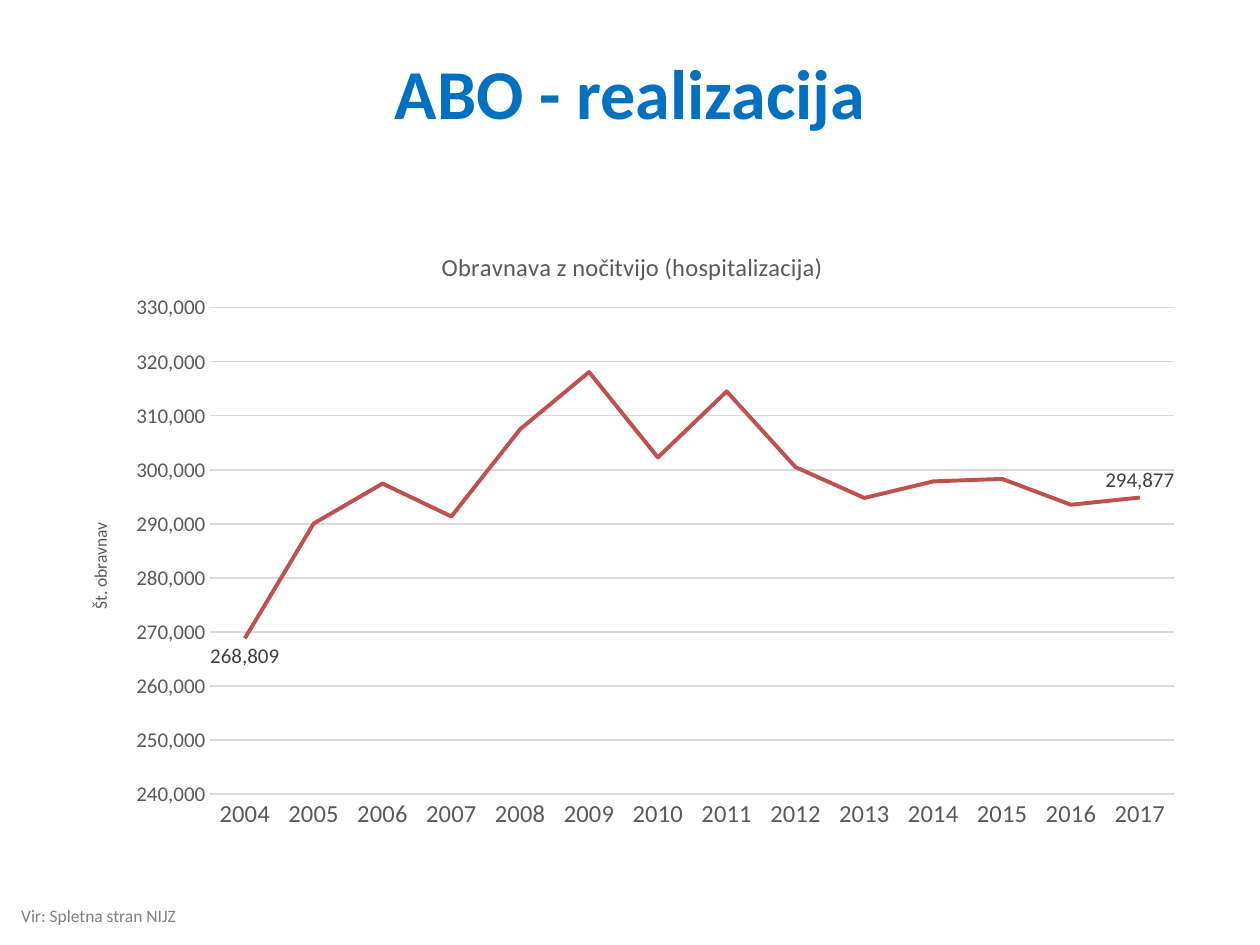
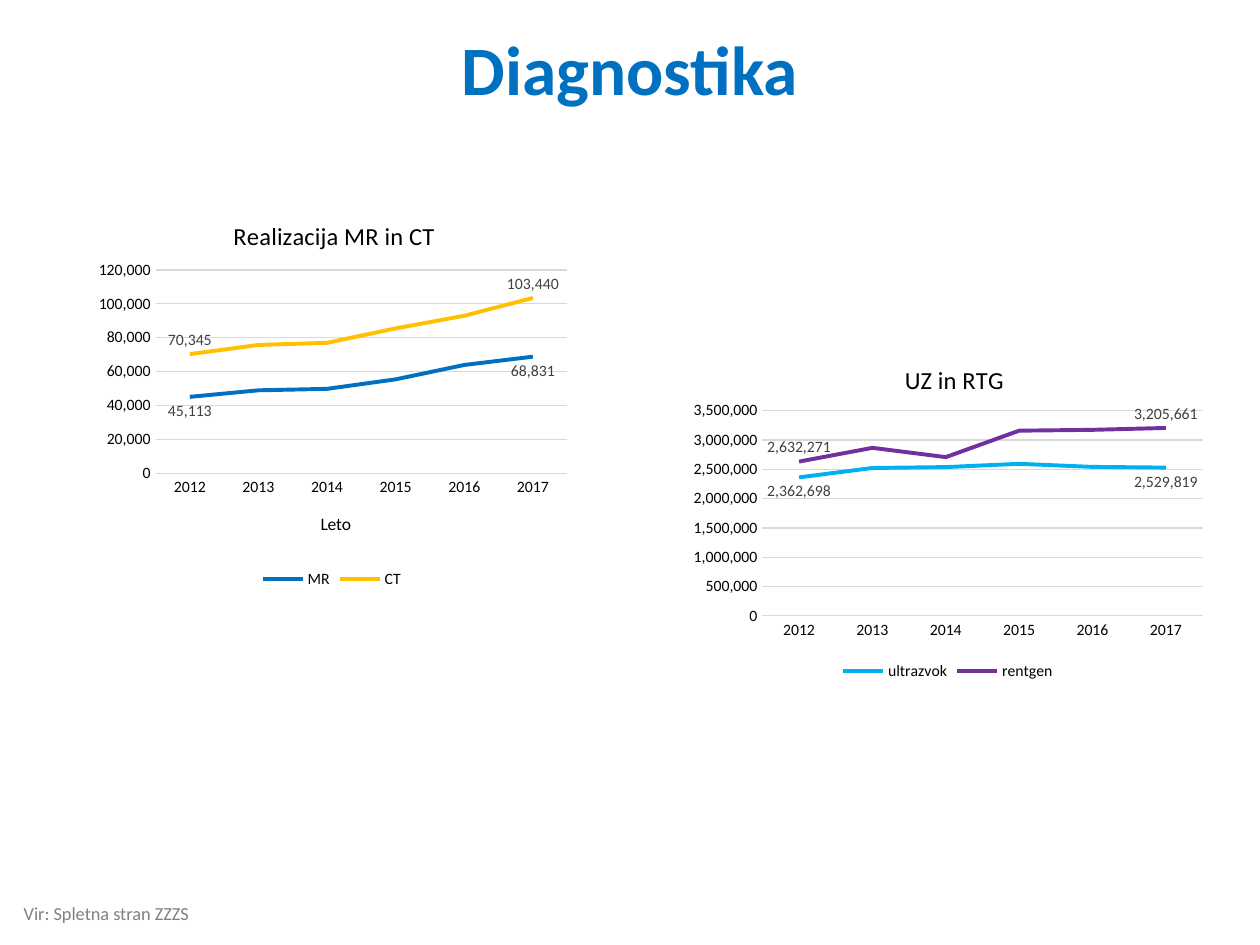
"""Build two slides of line charts on hospital care and diagnostics."""
from dataclasses import dataclass

from lxml import etree
from pptx import Presentation
from pptx.chart.data import CategoryChartData
from pptx.dml.color import RGBColor
from pptx.enum.chart import XL_CHART_TYPE, XL_LABEL_POSITION, XL_LEGEND_POSITION, XL_TICK_MARK
from pptx.enum.text import MSO_ANCHOR, MSO_AUTO_SIZE, PP_ALIGN
from pptx.oxml.ns import qn
from pptx.util import Pt

LINE_CHART = XL_CHART_TYPE.LINE
ABOVE, BELOW = XL_LABEL_POSITION.ABOVE, XL_LABEL_POSITION.BELOW
LEGEND_BOTTOM = XL_LEGEND_POSITION.BOTTOM
NO_TICK = XL_TICK_MARK.NONE
MIDDLE, CENTER, LEFT = MSO_ANCHOR.MIDDLE, PP_ALIGN.CENTER, PP_ALIGN.LEFT
NO_FIT = MSO_AUTO_SIZE.NONE
TITLE_ONLY = 5
THOUSANDS = "#,##0"


@dataclass(frozen=True)
class Theme:
    """Colours, font and type sizes."""
    font: str = "Calibri"
    heading: str = "0070C0"
    source: str = "808080"
    black: str = "000000"
    grey: str = "595959"
    label: str = "404040"
    grid: str = "D9D9D9"
    red: str = "C0504D"
    blue: str = "0070C0"
    yellow: str = "FFC000"
    cyan: str = "00B0F0"
    purple: str = "7030A0"
    chart_title_size: float = 14
    axis_title_size: float = 10
    grid_width: float = 0.75
    series_width: float = 2.25


THEME = Theme()


def set_all(target, **values):
    """Set each named attribute on the target."""
    for name, value in values.items():
        setattr(target, name, value)


def place(element, **fractions):
    """Give a chart part a manual layout in fractions of the chart."""
    layout = element.find(qn("c:layout"))
    if layout is not None:
        element.remove(layout)
    layout = etree.Element(qn("c:layout"))
    manual = etree.SubElement(layout, qn("c:manualLayout"))
    if "w" in fractions:
        etree.SubElement(manual, qn("c:layoutTarget"), val="inner")
    for axis in ("x", "y"):
        etree.SubElement(manual, qn(f"c:{axis}Mode"), val="edge")
    for name, value in fractions.items():
        etree.SubElement(manual, qn(f"c:{name}"), val=str(value))
    element.insert(0 if element.find(qn("c:tx")) is None else 1, layout)


class Deck:
    """Hold the theme and the current slide."""

    def __init__(self, theme):
        self.theme = theme
        self.deck = Presentation()
        set_all(self.deck, slide_width=Pt(720), slide_height=Pt(540))
        self.slide = None

    def style(self, font, size, color, bold=False):
        """Format a font in the theme typeface."""
        set_all(font, name=self.theme.font, size=Pt(size), bold=bold)
        font.color.rgb = RGBColor.from_string(color)

    def stroke(self, line, color, width):
        """Format a line."""
        line.color.rgb = RGBColor.from_string(color)
        line.width = Pt(width)

    def put_text(self, frame, text, size, color, align=LEFT, bold=False):
        """Fill a frame with one formatted paragraph."""
        frame.text = text
        paragraph = frame.paragraphs[0]
        paragraph.alignment = align
        self.style(paragraph.runs[0].font, size, color, bold)

    def title(self, text, box, size):
        """Start a slide with its title."""
        self.slide = self.deck.slides.add_slide(self.deck.slide_layouts[TITLE_ONLY])
        heading = self.slide.shapes.title
        set_all(heading, **dict(zip(("left", "top", "width", "height"), map(Pt, box))))
        set_all(heading.text_frame, auto_size=NO_FIT, vertical_anchor=MIDDLE)
        self.put_text(heading.text_frame, text, size, self.theme.heading, CENTER, True)

    def source(self, text, box, size):
        """Add the source note at the foot."""
        note = self.slide.shapes.add_textbox(*map(Pt, box))
        note.text_frame.word_wrap = True
        self.put_text(note.text_frame, text, size, self.theme.source)

    def axis(self, axis, size, color):
        """Format the parts that both axes share."""
        set_all(axis, major_tick_mark=NO_TICK, minor_tick_mark=NO_TICK)
        self.style(axis.tick_labels.font, size, color)

    def axis_title(self, axis, text, color, spot, rotation=0):
        """Fill and place an axis title."""
        title = axis.axis_title
        self.put_text(title.text_frame, text, self.theme.axis_title_size, color, CENTER)
        body = title.element.find(".//" + qn("a:bodyPr"))
        body.set("rot", str(rotation * 60000))
        body.set("vert", "horz")
        place(title.element, x=spot[0], y=spot[1])

    def line_chart(self, box, title, title_spot, plot_area, years, series,
                   scale, color, category_size, value_size, legend=False):
        """Add a line chart with labels on its end points."""
        theme = self.theme
        data = CategoryChartData(number_format=THOUSANDS)
        data.categories = [str(year) for year in years]
        for name, values, _, _ in series:
            data.add_series(name, values)
        chart = self.slide.shapes.add_chart(LINE_CHART, *map(Pt, box), data).chart
        self.style(chart.font, 10, theme.black)

        chart.has_title = True
        self.put_text(chart.chart_title.text_frame, title, theme.chart_title_size, color, CENTER)
        place(chart.chart_title.element, x=title_spot[0], y=title_spot[1])
        place(chart.element.find(".//" + qn("c:plotArea")), **dict(zip("xywh", plot_area)))

        categories, values = chart.category_axis, chart.value_axis
        self.axis(categories, category_size, color)
        self.axis(values, value_size, color)
        self.stroke(categories.format.line, theme.grid, theme.grid_width)
        self.stroke(values.major_gridlines.format.line, theme.grid, theme.grid_width)
        values.format.line.fill.background()
        set_all(values.tick_labels, number_format=THOUSANDS, number_format_is_linked=False)
        set_all(values, **dict(zip(("minimum_scale", "maximum_scale", "major_unit"), scale)))

        chart.has_legend = legend
        if legend:
            set_all(chart.legend, position=LEGEND_BOTTOM, include_in_layout=False)
            self.style(chart.legend.font, value_size, theme.black)

        chart.plots[0].vary_by_categories = False
        for curve, (_, _, curve_color, positions) in zip(chart.plots[0].series, series):
            curve.smooth = False
            self.stroke(curve.format.line, curve_color, theme.series_width)
            curve.data_labels.show_value = False
            for point, position in zip((0, len(years) - 1), positions):
                label = curve.points[point].data_label
                self.style(label.font, value_size, theme.label)
                label.position = position
        return chart


def hospital_slide(deck):
    """Show overnight hospital care by year."""
    deck.title("ABO - realizacija", (36, 7.2, 648, 90), 40)
    deck.source("Vir: Spletna stran NIJZ", (5, 513.4, 222.5, 19.4), 10)
    topic = "Obravnava z nočitvijo (hospitalizacija)"
    treatments = (268809, 290070, 297466, 291381, 307541, 318097, 302307,
                  314517, 300510, 294807, 297868, 298329, 293553, 294877)
    chart = deck.line_chart(
        (36, 126, 648, 356.4), topic, (0.33, 0.04), (0.13, 0.14, 0.85, 0.78),
        range(2004, 2018), [(topic, treatments, THEME.red, (BELOW, ABOVE))],
        (240000, 330000, 10000), THEME.grey, category_size=14, value_size=12)
    deck.axis_title(chart.value_axis, "Št. obravnav", THEME.grey, (0.02, 0.48), -90)


def diagnostics_slide(deck):
    """Show imaging volumes by year."""
    deck.title("Diagnostika", (49.7, 10.8, 620.6, 55.4), 39.6)
    deck.source("Vir: Spletna stran ZZZS", (6.5, 511.9, 130, 20.2), 10.5)
    shared = dict(years=range(2012, 2018), color=THEME.black,
                  category_size=9, value_size=9, legend=True)
    scans = [
        ("MR", (45113, 49019, 49863, 55464, 63945, 68831), THEME.blue, (BELOW, BELOW)),
        ("CT", (70345, 75741, 76998, 85496, 92946, 103440), THEME.yellow, (ABOVE, ABOVE)),
    ]
    chart = deck.line_chart(
        (49.7, 110.9, 280.1, 228.2), "Realizacija MR in CT", (0.29, 0.05),
        (0.14, 0.19, 0.84, 0.51), series=scans, scale=(0, 120000, 20000), **shared)
    deck.axis_title(chart.category_axis, "Leto", THEME.black, (0.47, 0.79))
    images = [
        ("ultrazvok", (2362698, 2522647, 2538111, 2594019, 2541105, 2529819),
         THEME.cyan, (BELOW, BELOW)),
        ("rentgen", (2632271, 2866571, 2708107, 3159634, 3173711, 3205661),
         THEME.purple, (ABOVE, ABOVE)),
    ]
    deck.line_chart(
        (390.2, 193, 303.1, 198.7), "UZ in RTG", (0.41, 0.06),
        (0.15, 0.21, 0.83, 0.59), series=images, scale=(0, 3500000, 500000), **shared)


def main():
    """Build and save the slides."""
    deck = Deck(THEME)
    hospital_slide(deck)
    diagnostics_slide(deck)
    deck.deck.save("out.pptx")


if __name__ == "__main__":
    main()
